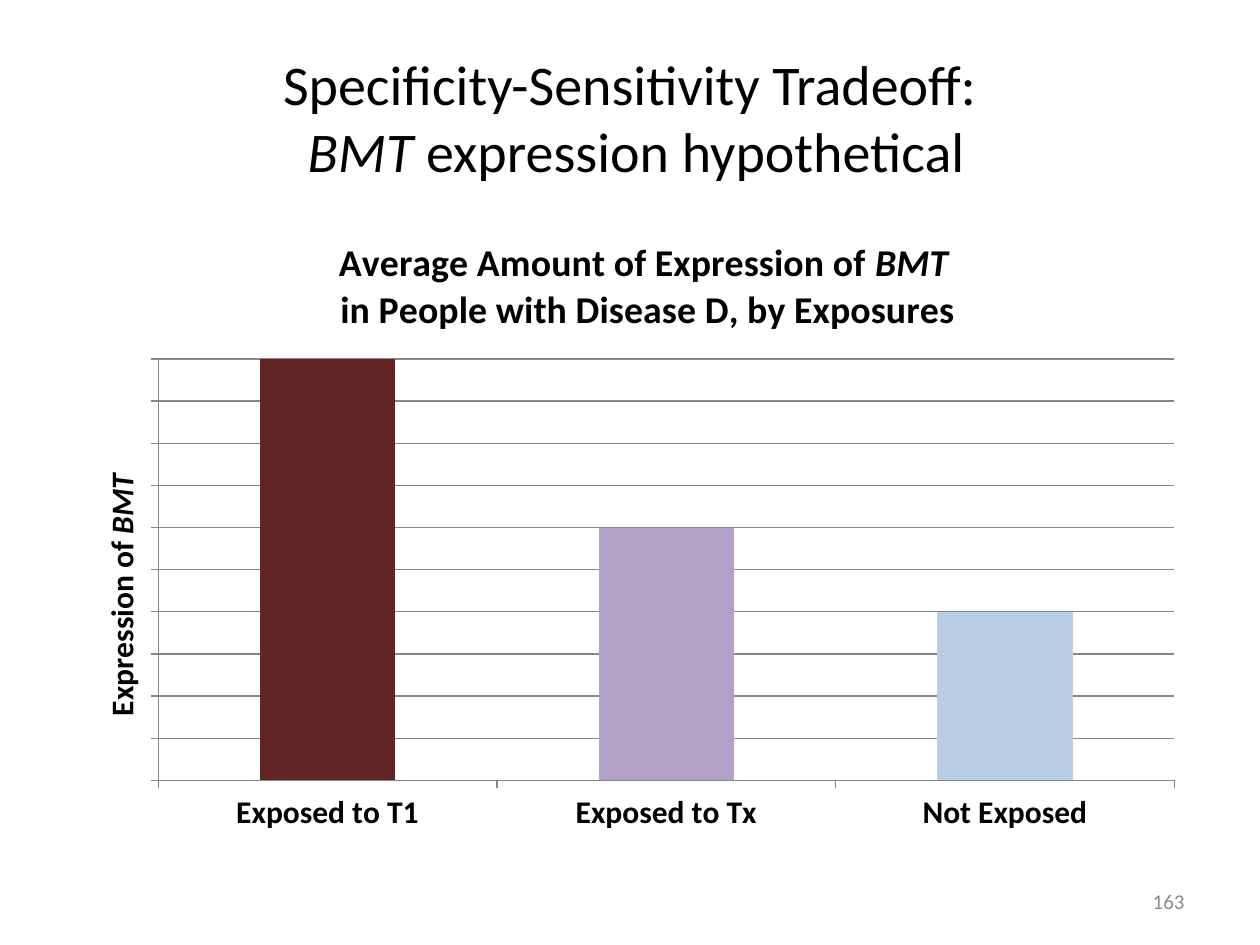
import pptx
import pptx.chart.data
import pptx.dml.color
import pptx.enum.chart
import pptx.enum.text
import pptx.oxml
import pptx.oxml.ns
import pptx.util

Inches = pptx.util.Inches
FONT = "Calibri"
COLORS = {"text": "000000", "number": "8C8C8C", "line": "868686", "series": "4F81BD"}

TITLE = [[("Specificity-Sensitivity Tradeoff:\n ", False), ("BMT ", True),
          ("expression hypothetical", False)]]
CHART_TITLE = [[("Average Amount of Expression of ", False), ("BMT ", True)],
               [("in People with Disease D, by Exposures", False)]]
AXIS_TITLE = [[("Expression of ", False), ("BMT", True)]]
SLIDE_NUMBER = [[("163", False)]]
BARS = [("Exposed to T1", 100, "632523"),
        ("Exposed to Tx", 60, "B3A2C7"),
        ("Not Exposed", 40, "B9CDE5")]


def rgb(value):
    return pptx.dml.color.RGBColor.from_string(value)


def format_font(font, size, color, bold=False, italic=False):
    font.name = FONT
    font.size = pptx.util.Pt(size)
    font.bold = bold
    font.italic = italic
    font.color.rgb = rgb(color)


def write_text(frame, paragraphs, size, color=COLORS["text"], bold=False, align="CENTER"):
    for index, runs in enumerate(paragraphs):
        paragraph = frame.paragraphs[0] if index == 0 else frame.add_paragraph()
        paragraph.alignment = getattr(pptx.enum.text.PP_ALIGN, align)
        for text, italic in runs:
            for line_index, line in enumerate(text.split("\n")):
                if line_index:
                    paragraph.add_line_break()
                run = paragraph.add_run()
                run.text = line
                format_font(run.font, size, color, bold, italic)


def place(element, index, inner=False, **fractions):
    for old in element.findall(pptx.oxml.ns.qn("c:layout")):
        element.remove(old)
    target = '<c:layoutTarget val="inner"/>' if inner else ""
    modes = '<c:xMode val="edge"/><c:yMode val="edge"/>'
    values = "".join(f'<c:{key} val="{value}"/>' for key, value in fractions.items())
    element.insert(index, pptx.oxml.parse_xml(
        f'<c:layout {pptx.oxml.ns.nsdecls("c")}><c:manualLayout>'
        f'{target}{modes}{values}</c:manualLayout></c:layout>'))


def add_expression_chart(slide):
    data = pptx.chart.data.CategoryChartData()
    data.categories = [name for name, value, color in BARS]
    data.add_series("Series 1", [value for name, value, color in BARS])
    chart = slide.shapes.add_chart(
        pptx.enum.chart.XL_CHART_TYPE.COLUMN_STACKED,
        Inches(0.5), Inches(1.75), Inches(9), Inches(4.95), data).chart
    format_font(chart.font, 18, COLORS["text"])
    chart.has_legend = False
    chart.has_title = True
    write_text(chart.chart_title.text_frame, CHART_TITLE, 21.6, bold=True)

    plot = chart.plots[0]
    plot.gap_width = 150
    plot.overlap = 100
    plot.vary_by_categories = False
    series = plot.series[0]
    series.format.fill.solid()
    series.format.fill.fore_color.rgb = rgb(COLORS["series"])
    for index, (name, value, color) in enumerate(BARS):
        fill = series.points[index].format.fill
        fill.solid()
        fill.fore_color.rgb = rgb(color)

    value_axis = chart.value_axis
    value_axis.minimum_scale = 0
    value_axis.maximum_scale = 100
    value_axis.major_unit = 10
    value_axis.has_major_gridlines = True
    value_axis.tick_label_position = pptx.enum.chart.XL_TICK_LABEL_POSITION.NONE
    value_axis.has_title = True
    write_text(value_axis.axis_title.text_frame, AXIS_TITLE, 18, bold=True)
    format_font(chart.category_axis.tick_labels.font, 18, COLORS["text"], bold=True)
    for axis in (value_axis, chart.category_axis):
        axis.major_tick_mark = pptx.enum.chart.XL_TICK_MARK.OUTSIDE
    for part in (value_axis, chart.category_axis, value_axis.major_gridlines):
        part.format.line.color.rgb = rgb(COLORS["line"])
        part.format.line.width = pptx.util.Pt(0.75)

    plot_area = chart.element.find(".//" + pptx.oxml.ns.qn("c:plotArea"))
    place(plot_area, 0, inner=True, x=0.084, y=0.222, w=0.896, h=0.676)
    place(chart.chart_title.element if hasattr(chart.chart_title, "element")
          else chart.chart_title._element, 1, x=0.24, y=0.02)
    place(value_axis.axis_title._element, 1, x=0.03, y=0.4)


def main():
    presentation = pptx.Presentation()
    presentation.slide_width = Inches(10)
    presentation.slide_height = Inches(7.5)
    slide = presentation.slides.add_slide(presentation.slide_layouts[5])

    title = slide.shapes.title
    title.left, title.top, title.width, title.height = map(Inches, (0.5, 0.3, 9, 1.25))
    title.text_frame.vertical_anchor = pptx.enum.text.MSO_ANCHOR.MIDDLE
    write_text(title.text_frame, TITLE, 32)

    add_expression_chart(slide)

    number = slide.shapes.add_textbox(Inches(7.17), Inches(6.95), Inches(2.33), Inches(0.4))
    number.text_frame.word_wrap = True
    number.text_frame.vertical_anchor = pptx.enum.text.MSO_ANCHOR.MIDDLE
    write_text(number.text_frame, SLIDE_NUMBER, 12, color=COLORS["number"], align="RIGHT")

    presentation.save("out.pptx")


if __name__ == "__main__":
    main()
